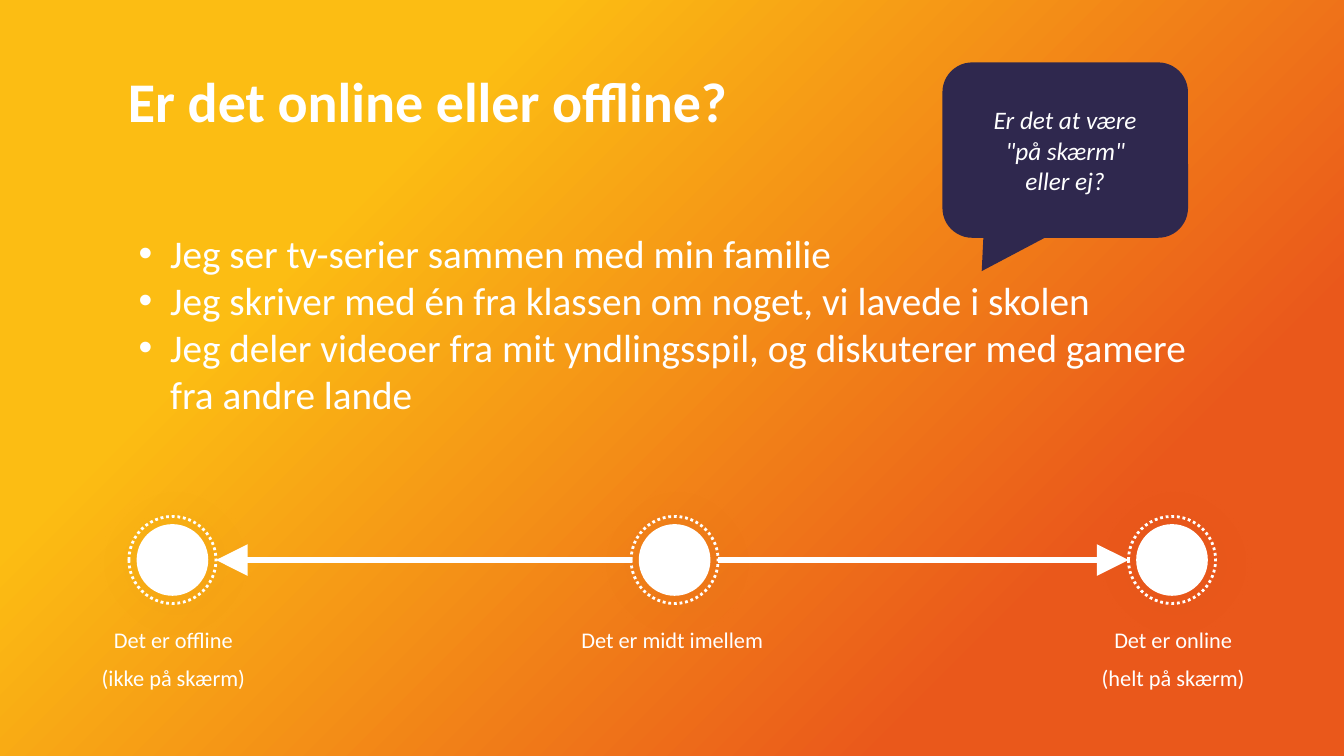
from pptx import Presentation
from pptx.dml.color import RGBColor
from pptx.enum.dml import MSO_LINE
from pptx.enum.shapes import MSO_CONNECTOR, MSO_SHAPE
from pptx.enum.text import MSO_ANCHOR, MSO_AUTO_SIZE, PP_ALIGN
from pptx.oxml import parse_xml
from pptx.oxml.ns import nsdecls
from pptx.util import Pt

WHITE = RGBColor(0xFF, 0xFF, 0xFF)
YELLOW = RGBColor(0xFC, 0xBD, 0x13)
ORANGE = RGBColor(0xEA, 0x58, 0x1B)
NAVY = RGBColor(0x2F, 0x28, 0x4E)
FONT = "Calibri"

# Scale geometry in points
SCALE_Y = 400
RING = 62.2
DOT = 51.2
LABEL_TOP = 445.7
LABEL_WIDTH = 226

STATEMENTS = [
    "Jeg ser tv-serier sammen med min familie",
    "Jeg skriver med én fra klassen om noget, vi lavede i skolen",
    "Jeg deler videoer fra mit yndlingsspil, og diskuterer med gamere fra andre lande",
]
# Stop centre, label centre, label lines
STOPS = [
    (123.2, 123.8, ["Det er offline", "(ikke på skærm)"]),
    (481.9, 480.2, ["Det er midt imellem"]),
    (837.2, 838, ["Det er online", "(helt på skærm)"]),
]


def place(shape, left, top, width, height):
    shape.left, shape.top = Pt(left), Pt(top)
    shape.width, shape.height = Pt(width), Pt(height)


def add_run(paragraph, text, size, bold=False, italic=False):
    run = paragraph.add_run()
    run.text = text
    font = run.font
    font.name, font.size = FONT, Pt(size)
    font.bold, font.italic = bold, italic
    font.color.rgb = WHITE


def next_paragraph(text_frame, index):
    return text_frame.add_paragraph() if index else text_frame.paragraphs[0]


def set_background(slide):
    fill = slide.background.fill
    fill.gradient()
    fill.gradient_angle = 315
    for stop, position, color in zip(fill.gradient_stops, (0.26, 0.78), (YELLOW, ORANGE)):
        stop.position = position
        stop.color.rgb = color


def fill_title(title):
    place(title, 84.2, 43.9, 795.6, 56.2)
    text_frame = title.text_frame
    text_frame.auto_size = MSO_AUTO_SIZE.NONE
    text_frame.vertical_anchor = MSO_ANCHOR.BOTTOM
    paragraph = text_frame.paragraphs[0]
    paragraph.alignment = PP_ALIGN.LEFT
    paragraph.line_spacing = 0.9
    add_run(paragraph, "Er det online eller offline?", 40, bold=True)


def fill_statements(body):
    place(body, 91.8, 160, 776.2, 143.3)
    text_frame = body.text_frame
    text_frame.auto_size = MSO_AUTO_SIZE.SHAPE_TO_FIT_TEXT
    for index, statement in enumerate(STATEMENTS):
        paragraph = next_paragraph(text_frame, index)
        properties = paragraph._p.get_or_add_pPr()
        properties.set("marL", str(Pt(22.5)))
        properties.set("indent", str(-Pt(22.5)))
        properties.append(parse_xml(f'<a:buFont {nsdecls("a")} typeface="Arial"/>'))
        properties.append(parse_xml(f'<a:buChar {nsdecls("a")} char="•"/>'))
        paragraph.space_before = Pt(0)
        add_run(paragraph, statement, 28)


def add_circle(slide, center, diameter):
    circle = slide.shapes.add_shape(
        MSO_SHAPE.OVAL, Pt(center - diameter / 2), Pt(SCALE_Y - diameter / 2),
        Pt(diameter), Pt(diameter))
    circle.shadow.inherit = False
    return circle


def add_stop(slide, center):
    # Dotted ring with a soft shadow
    ring = add_circle(slide, center, RING)
    ring.fill.background()
    ring.line.color.rgb = WHITE
    ring.line.width = Pt(2)
    ring.line.dash_style = MSO_LINE.ROUND_DOT
    effects = ring._element.spPr.find("{*}effectLst")
    effects.append(parse_xml(
        f'<a:outerShdw {nsdecls("a")} blurRad="{Pt(31.7)}" dist="{Pt(3)}" dir="2700000" '
        'algn="tl" rotWithShape="0"><a:srgbClr val="000000"><a:alpha val="26000"/>'
        '</a:srgbClr></a:outerShdw>'))
    # Solid dot
    dot = add_circle(slide, center, DOT)
    dot.fill.solid()
    dot.fill.fore_color.rgb = WHITE
    dot.line.fill.background()


def add_arrow(slide, start, end):
    arrow = slide.shapes.add_connector(
        MSO_CONNECTOR.STRAIGHT, Pt(start), Pt(SCALE_Y), Pt(end), Pt(SCALE_Y))
    arrow.line.color.rgb = WHITE
    arrow.line.width = Pt(4.5)
    arrow.line._get_or_add_ln().append(
        parse_xml(f'<a:tailEnd {nsdecls("a")} type="triangle" w="lg" len="lg"/>'))
    arrow._element.spPr.append(parse_xml(f'<a:effectLst {nsdecls("a")}/>'))


def add_label(slide, center, lines):
    label = slide.shapes.add_textbox(
        Pt(center - LABEL_WIDTH / 2), Pt(LABEL_TOP), Pt(LABEL_WIDTH), Pt(24))
    text_frame = label.text_frame
    text_frame.word_wrap = True
    for index, line in enumerate(lines):
        paragraph = next_paragraph(text_frame, index)
        paragraph.alignment = PP_ALIGN.CENTER
        paragraph.line_spacing = 0.9
        paragraph.space_before = Pt(10 if index else 0)
        add_run(paragraph, line, 16)


def add_callout(slide):
    callout = slide.shapes.add_shape(
        MSO_SHAPE.ROUNDED_RECTANGULAR_CALLOUT, Pt(673.2), Pt(44.6), Pt(175.4), Pt(125.3))
    for index, value in enumerate((-0.34, 0.69, 0.17)):
        callout.adjustments[index] = value
    callout.shadow.inherit = False
    callout.fill.solid()
    callout.fill.fore_color.rgb = NAVY
    callout.line.fill.background()
    text_frame = callout.text_frame
    text_frame.word_wrap = True
    text_frame.vertical_anchor = MSO_ANCHOR.MIDDLE
    for index, lines in enumerate((["Er det at være"], ['"på skærm"', "eller ej?"])):
        paragraph = next_paragraph(text_frame, index)
        paragraph.alignment = PP_ALIGN.CENTER
        for line_index, line in enumerate(lines):
            if line_index:
                paragraph.add_line_break()
            add_run(paragraph, line, 18, italic=True)


def main():
    presentation = Presentation()
    presentation.slide_width, presentation.slide_height = Pt(960), Pt(540)
    slide = presentation.slides.add_slide(presentation.slide_layouts[1])
    set_background(slide)

    # Heading, statements and question
    fill_title(slide.shapes.title)
    fill_statements(slide.placeholders[1])
    add_callout(slide)

    # Scale from offline to online
    for center, label_center, lines in STOPS:
        add_stop(slide, center)
        add_label(slide, label_center, lines)
    offline, middle, online = (stop[0] for stop in STOPS)
    add_arrow(slide, middle - RING / 2, offline + RING / 2)
    add_arrow(slide, middle + RING / 2, online - RING / 2)

    presentation.save("out.pptx")


if __name__ == "__main__":
    main()
